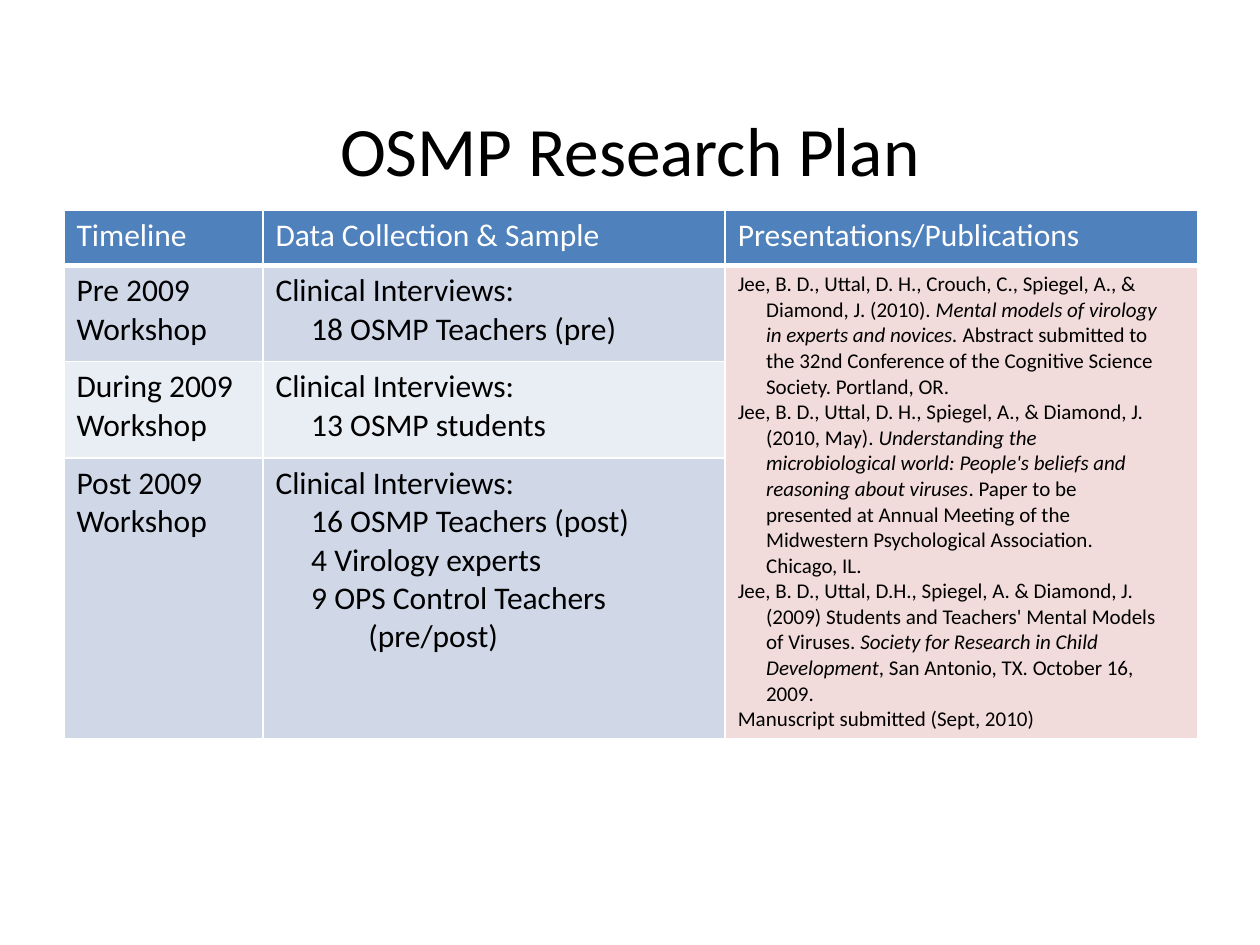
from dataclasses import dataclass

from lxml import etree
from pptx import Presentation
from pptx import util as u
from pptx.dml.color import RGBColor
from pptx.enum import text
from pptx.oxml import ns


@dataclass(frozen=True)
class Theme:
    font: str = "Calibri"
    title_size: float = 39.6
    body_size: float = 18
    reference_size: float = 12
    ink: str = "000000"
    white: str = "FFFFFF"
    header: str = "4F81BD"
    bands: tuple = ("D0D8E8", "E9EDF4")
    references: str = "F2DCDB"
    border: float = 1
    header_border: float = 3


THEME = Theme()

TITLE = "OSMP Research Plan"
HEADERS = ["Timeline", "Data Collection & Sample", "Presentations/Publications"]

# Each sample line is (indent level, text).
STAGES = [
    ("Pre 2009 Workshop", [(0, "Clinical Interviews:"), (1, "18 OSMP Teachers (pre)")]),
    ("During 2009 Workshop", [(0, "Clinical Interviews:"), (1, "13 OSMP students")]),
    ("Post 2009 Workshop", [
        (0, "Clinical Interviews:"),
        (1, "16 OSMP Teachers (post)"),
        (1, "4 Virology experts"),
        (1, "9 OPS Control Teachers"),
        (2, "(pre/post)"),
    ]),
]

# Asterisks enclose italics.
REFERENCES = [
    """Jee, B. D., Uttal, D. H., Crouch, C., Spiegel, A., &
Diamond, J. (2010). *Mental models of virology
in experts and novices.* Abstract submitted to
the 32nd Conference of the Cognitive Science
Society. Portland, OR.""",
    """Jee, B. D., Uttal, D. H., Spiegel, A., & Diamond, J.
(2010, May). *Understanding the
microbiological world: People's beliefs and
reasoning about viruses*. Paper to be
presented at Annual Meeting of the
Midwestern Psychological Association.
Chicago, IL.""",
    """Jee, B. D., Uttal, D.H., Spiegel, A. & Diamond, J.
(2009) Students and Teachers' Mental Models
of Viruses. *Society for Research in Child
Development*, San Antonio, TX. October 16,
2009.""",
    "Manuscript submitted (Sept, 2010)",
]

SLIDE_SIZE = u.Cm(25.4), u.Cm(19.05)
TITLE_BOX = u.Cm(1.27), u.Cm(1.96), u.Cm(22.86), u.Cm(2.06)
TABLE_LEFT, TABLE_TOP = u.Cm(1.29), u.Cm(4.24)
COLUMN_WIDTHS = [u.Cm(4.01), u.Cm(9.32), u.Cm(9.52)]
ROW_HEIGHTS = [u.Cm(1.11), u.Cm(1.94), u.Cm(1.94), u.Cm(5.66)]
SAMPLE_INDENTS = [u.Cm(0), u.Cm(0.72), u.Cm(1.87)]
REFERENCE_INDENT = u.Cm(0.57)


def set_font(paragraph, size, color=THEME.ink):
    font = paragraph.font
    font.name, font.size, font.bold = THEME.font, u.Pt(size), False
    font.color.rgb = RGBColor.from_string(color)


def set_indent(paragraph, margin, first_line=0):
    properties = paragraph._p.get_or_add_pPr()
    properties.set("marL", str(int(margin)))
    properties.set("indent", str(int(first_line)))


def style_cell(cell, fill, bottom=THEME.border):
    """Draw white borders around the cell and fill it."""
    properties = cell._tc.get_or_add_tcPr()
    for side in "LRTB":
        points = bottom if side == "B" else THEME.border
        line = etree.SubElement(properties, ns.qn(f"a:ln{side}"), w=str(int(u.Pt(points))))
        solid = etree.SubElement(line, ns.qn("a:solidFill"))
        etree.SubElement(solid, ns.qn("a:srgbClr"), val=THEME.white)
    cell.fill.solid()
    cell.fill.fore_color.rgb = RGBColor.from_string(fill)


def new_paragraphs(frame, items):
    """Pair each item with a paragraph, starting with the existing one."""
    for index, item in enumerate(items):
        yield (frame.add_paragraph() if index else frame.paragraphs[0]), item


def write_reference(paragraph, reference):
    for part_index, part in enumerate(reference.split("*")):
        for line_index, line in enumerate(part.split("\n")):
            if line_index:
                paragraph.add_line_break()
            if line:
                run = paragraph.add_run()
                run.text = line
                if part_index % 2:
                    run.font.italic = True
    set_font(paragraph, THEME.reference_size)
    set_indent(paragraph, REFERENCE_INDENT, -REFERENCE_INDENT)


def add_title(slide):
    frame = slide.shapes.add_textbox(*TITLE_BOX).text_frame
    frame.word_wrap = True
    frame.vertical_anchor = text.MSO_ANCHOR.MIDDLE
    paragraph = frame.paragraphs[0]
    paragraph.text = TITLE
    paragraph.alignment = text.PP_ALIGN.CENTER
    set_font(paragraph, THEME.title_size)


def add_plan(slide):
    table = slide.shapes.add_table(
        len(ROW_HEIGHTS), len(COLUMN_WIDTHS), TABLE_LEFT, TABLE_TOP,
        sum(COLUMN_WIDTHS), sum(ROW_HEIGHTS)).table
    table.horz_banding = False
    for column, width in zip(table.columns, COLUMN_WIDTHS):
        column.width = width
    for row, height in zip(table.rows, ROW_HEIGHTS):
        row.height = height

    for column, header in enumerate(HEADERS):
        cell = table.cell(0, column)
        cell.text = header
        set_font(cell.text_frame.paragraphs[0], THEME.body_size, THEME.white)
        style_cell(cell, THEME.header, THEME.header_border)

    for row, (stage, samples) in enumerate(STAGES, start=1):
        stage_cell, sample_cell, reference_cell = (table.cell(row, c) for c in range(3))
        stage_cell.text = stage
        set_font(stage_cell.text_frame.paragraphs[0], THEME.body_size)
        for paragraph, (level, sample) in new_paragraphs(sample_cell.text_frame, samples):
            paragraph.text = sample
            set_font(paragraph, THEME.body_size)
            set_indent(paragraph, SAMPLE_INDENTS[level])
        band = THEME.bands[(row - 1) % 2]
        style_cell(stage_cell, band)
        style_cell(sample_cell, band)
        style_cell(reference_cell, THEME.references)

    reference_cell = table.cell(1, 2)
    reference_cell.merge(table.cell(len(STAGES), 2))
    for paragraph, reference in new_paragraphs(reference_cell.text_frame, REFERENCES):
        write_reference(paragraph, reference)


def main():
    presentation = Presentation()
    presentation.slide_width, presentation.slide_height = SLIDE_SIZE
    slide = presentation.slides.add_slide(presentation.slide_layouts[6])
    add_title(slide)
    add_plan(slide)
    presentation.save("out.pptx")


if __name__ == "__main__":
    main()
